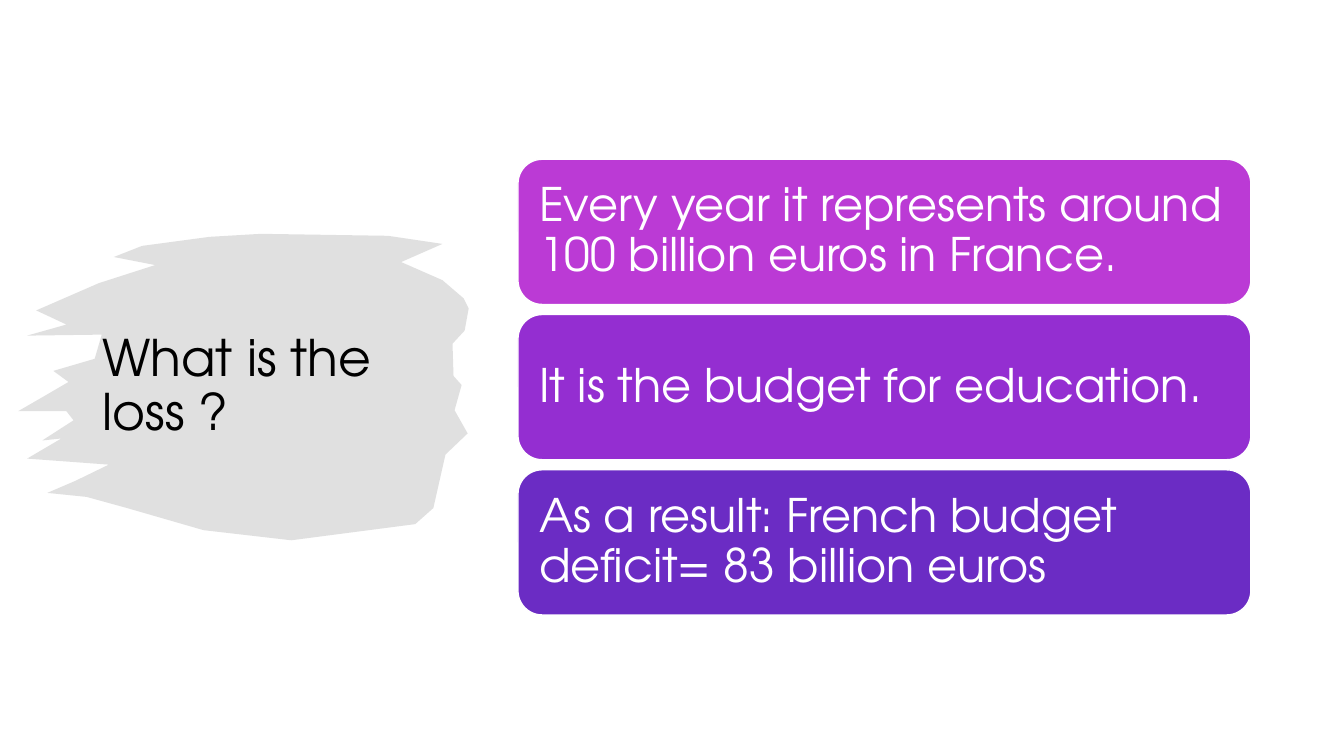
from lxml import etree
from pptx import Presentation
from pptx.dml.color import RGBColor
from pptx.enum.shapes import MSO_SHAPE
from pptx.enum.text import MSO_ANCHOR, MSO_AUTO_SIZE, PP_ALIGN
from pptx.oxml.ns import qn
from pptx.util import Pt

ROUNDED = MSO_SHAPE.ROUNDED_RECTANGLE
MIDDLE = MSO_ANCHOR.MIDDLE
LEFT = PP_ALIGN.LEFT
NO_AUTOFIT = MSO_AUTO_SIZE.NONE
TITLE_ONLY = 5

FONT = "TeX Gyre Adventor"
COLORS = {
    "white": "FFFFFF", "black": "000000", "brush": "D9D9D9",
    "pink": "BB3AD5", "purple": "942ED1", "violet": "6B2CC4",
}
CARDS = [
    ("Every year it represents around 100 billion euros in France.", "pink"),
    ("It is the budget for education.", "purple"),
    ("As a result: French budget deficit= 83 billion euros", "violet"),
]

# Brush stroke outline, clockwise from the top, in units of 0.72 pt
BRUSH_UNIT = Pt(0.72)
BRUSH = [
    (259, 232), (385, 234), (439, 242), (398, 260), (439, 278), (460, 296),
    (465, 306), (461, 328), (449, 341), (450, 373), (458, 382), (451, 407),
    (464, 430), (442, 451), (430, 504), (412, 520), (289, 536), (202, 526),
    (126, 504), (86, 493), (47, 489), (75, 477), (108, 461), (27, 455),
    (61, 435), (42, 437), (73, 417), (66, 408), (18, 408), (44, 393),
    (68, 379), (53, 368), (94, 356), (101, 332), (27, 333), (66, 322),
    (36, 308), (98, 281), (154, 263), (113, 255), (141, 244), (208, 235),
]


def rgb(name):
    return RGBColor.from_string(COLORS[name])


def write_text(sp, text, *, size, color, inset=None):
    tf = sp.text_frame
    tf.word_wrap = True
    tf.auto_size = NO_AUTOFIT
    tf.vertical_anchor = MIDDLE
    if inset is not None:
        tf.margin_left = tf.margin_right = inset
        tf.margin_top = tf.margin_bottom = inset
    p = tf.paragraphs[0]
    p.alignment = LEFT
    p.line_spacing = 0.9
    r = p.add_run()
    r.text = text
    r.font.name = FONT
    r.font.size = size
    r.font.color.rgb = rgb(color)


def fill_shape(sp, color):
    sp.shadow.inherit = False
    sp.fill.solid()
    sp.fill.fore_color.rgb = rgb(color)


def add_title(slide, text):
    sp = slide.shapes.title
    sp.left, sp.top, sp.width, sp.height = Pt(66), Pt(118), Pt(253.5), Pt(317)
    write_text(sp, text, size=Pt(36), color="black")


def add_brush(slide):
    builder = slide.shapes.build_freeform(*BRUSH[0], scale=BRUSH_UNIT)
    builder.add_line_segments(BRUSH[1:], close=True)
    sp = builder.convert_to_shape()
    fill_shape(sp, "brush")
    sp.line.fill.background()
    # 80 % opacity
    fill_color = sp._element.spPr.find(qn("a:solidFill"))[0]
    etree.SubElement(fill_color, qn("a:alpha")).set("val", "80000")
    # Behind the title
    slide.shapes.title._element.addprevious(sp._element)


def add_card(slide, top, text, color):
    sp = slide.shapes.add_shape(ROUNDED, Pt(370), top, Pt(523.5), Pt(103.7))
    fill_shape(sp, color)
    sp.line.color.rgb = rgb("white")
    sp.line.width = Pt(1)
    write_text(sp, text, size=Pt(33), color="white", inset=Pt(10))


def main():
    prs = Presentation()
    prs.slide_width, prs.slide_height = Pt(960), Pt(540)
    slide = prs.slides.add_slide(prs.slide_layouts[TITLE_ONLY])

    # Title on its brush stroke
    add_title(slide, "What is the loss ?")
    add_brush(slide)

    # Stacked cards
    for i, (text, color) in enumerate(CARDS):
        add_card(slide, Pt(113.8 + i * 110.9), text, color)

    prs.save("out.pptx")


if __name__ == "__main__":
    main()
